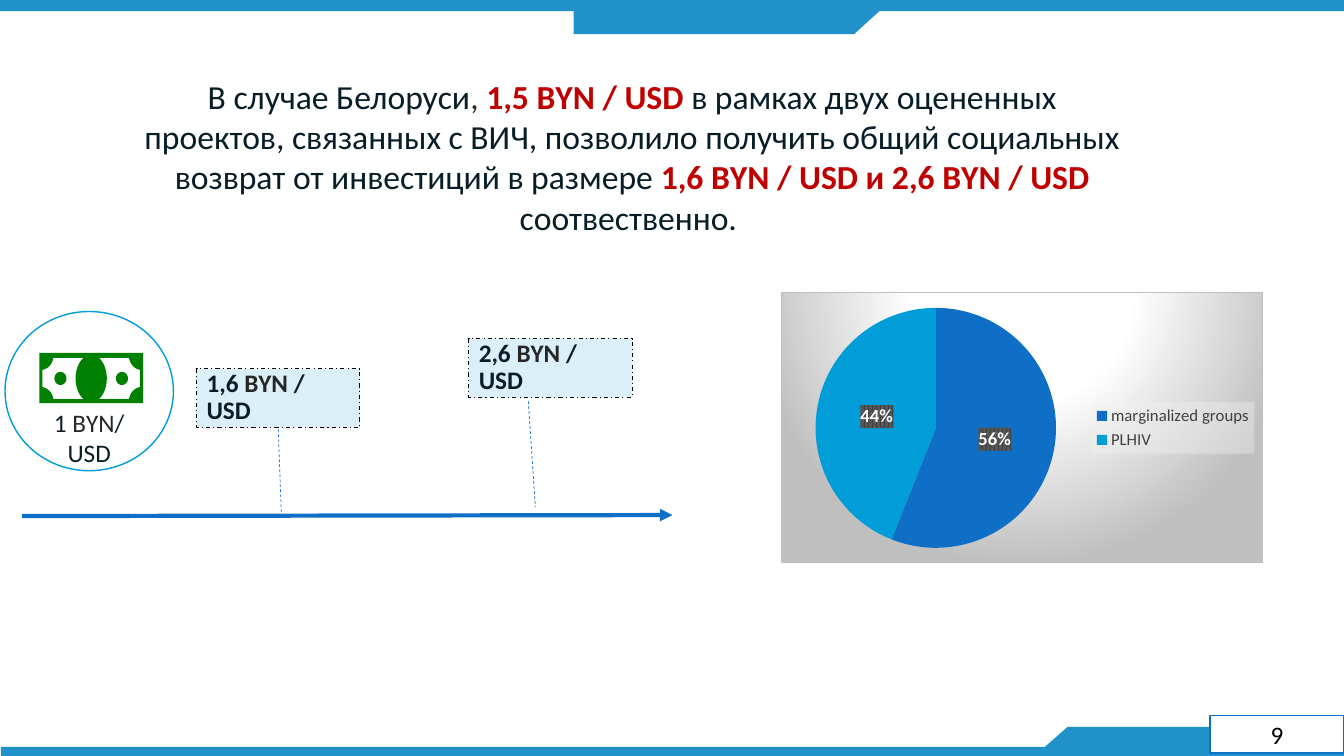
from dataclasses import dataclass
from math import cos, pi, sin

from lxml.etree import SubElement
from pptx import Presentation
from pptx.chart.data import CategoryChartData
from pptx.dml.color import RGBColor
from pptx.enum.chart import XL_CHART_TYPE as CT, XL_LABEL_POSITION as LP, XL_LEGEND_POSITION as LG
from pptx.enum.dml import MSO_LINE_DASH_STYLE as DASH
from pptx.enum.shapes import MSO_CONNECTOR, MSO_SHAPE as SHAPE
from pptx.enum.text import MSO_ANCHOR as ANCHOR, MSO_AUTO_SIZE as AUTO, PP_ALIGN as ALIGN
from pptx.oxml import parse_xml
from pptx.oxml.ns import nsdecls, qn
from pptx.util import Inches, Pt


@dataclass(frozen=True)
class Theme:
    font: str = "Calibri"
    band: str = "2191C9"
    blue: str = "0F6FC6"
    cyan: str = "009DD9"
    pale: str = "DBEFF9"
    ink: str = "071D28"
    grey: str = "262626"
    legend: str = "404040"
    red: str = "C00000"
    money: str = "008000"
    white: str = "FFFFFF"
    black: str = "000000"
    border: str = "BFBFBF"
    title_size: float = 24
    text_size: float = 18
    label_size: float = 13.3
    legend_size: float = 12
    chart_size: float = 10


def rgb(color):
    return RGBColor.from_string(color)


def style_font(font, name, size, color, bold=False):
    font.name, font.size, font.bold = name, Pt(size), bold
    font.color.rgb = rgb(color)


def write(tf, runs, *, font, size, bold=False, align=ALIGN.LEFT, anchor=ANCHOR.MIDDLE, spacing=1.0):
    """Fill a text frame with (text, color[, bold]) runs in one paragraph."""
    tf.word_wrap, tf.auto_size, tf.vertical_anchor = True, AUTO.NONE, anchor
    p = tf.paragraphs[0]
    p.alignment, p.line_spacing = align, spacing
    for text, color, *own_bold in runs:
        r = p.add_run()
        r.text = text
        style_font(r.font, font, size, color, own_bold[0] if own_bold else bold)


def bezier(p0, p1, p2, p3, steps=8):
    """Points along a cubic curve, without its start."""
    points = []
    for i in range(1, steps + 1):
        t = i / steps
        weights = ((1 - t) ** 3, 3 * t * (1 - t) ** 2, 3 * t * t * (1 - t), t ** 3)
        points.append(tuple(sum(w * q[axis] for w, q in zip(weights, (p0, p1, p2, p3)))
                            for axis in (0, 1)))
    return points


def chart_fill(parent, fill, line=""):
    """Put shape properties on a chart part that already has text properties."""
    sp_pr = parse_xml(f"<c:spPr {nsdecls('c', 'a')}>{fill}{line}</c:spPr>")
    parent.find(qn("c:txPr")).addprevious(sp_pr)


class SlideBuilder:
    def __init__(self, slide, theme):
        self.slide, self.theme = slide, theme

    def title(self, box, runs):
        sp = self.slide.shapes.title
        sp.left, sp.top, sp.width, sp.height = map(Inches, box)
        write(sp.text_frame, runs, font=self.theme.font, size=self.theme.title_size,
              align=ALIGN.CENTER, anchor=ANCHOR.TOP)

    def shape(self, kind, box, fill, line=None, width=1, dash=None, rotation=0):
        sp = self.slide.shapes.add_shape(kind, *map(Inches, box))
        sp.rotation = rotation
        return self.paint(sp, fill, line, width, dash)

    def paint(self, sp, fill, line=None, width=1, dash=None):
        sp.shadow.inherit = False
        sp.fill.solid()
        sp.fill.fore_color.rgb = rgb(fill)
        if line:
            sp.line.color.rgb, sp.line.width = rgb(line), Pt(width)
            sp.line.dash_style = dash
        else:
            sp.line.fill.background()
        return sp

    def text(self, sp, runs, **fmt):
        write(sp.text_frame, runs, font=self.theme.font, size=self.theme.text_size, **fmt)

    def line(self, start, end, width, dash=None, arrow=False):
        s = self.slide.shapes.add_connector(MSO_CONNECTOR.STRAIGHT, *map(Inches, start + end))
        s.line.color.rgb, s.line.width = rgb(self.theme.blue), Pt(width)
        s.line.dash_style = dash
        sp_pr = s._element.spPr
        if arrow:
            SubElement(sp_pr.find(qn("a:ln")), qn("a:tailEnd"), type="triangle")
        SubElement(sp_pr, qn("a:effectLst"))

    def outline(self, contours, fill):
        contours = [[(Inches(x), Inches(y)) for x, y in c] for c in contours]
        builder = self.slide.shapes.build_freeform(*contours[0][0])
        for i, (first, *rest) in enumerate(contours):
            if i:
                builder.move_to(*first)
            builder.add_line_segments(rest, close=True)
        return self.paint(builder.convert_to_shape(), fill)

    def pie(self, box, values, colors):
        th = self.theme
        data = CategoryChartData()
        data.categories = list(values)
        data.add_series("Series 1", list(values.values()))
        chart = self.slide.shapes.add_chart(CT.PIE, *map(Inches, box), data).chart
        chart.has_title = False
        style_font(chart.font, th.font, th.chart_size, th.black)
        plot = chart.plots[0]
        plot.vary_by_categories = True
        for i, color in enumerate(colors):
            fill = plot.series[0].points[i].format.fill
            fill.solid()
            fill.fore_color.rgb = rgb(color)
        # Percent labels on a dark pattern
        plot.has_data_labels = True
        labels = plot.data_labels
        labels.show_percentage, labels.show_value = True, False
        labels.number_format, labels.number_format_is_linked = "0%", False
        labels.position = LP.CENTER
        style_font(labels.font, th.font, th.label_size, th.white, True)
        chart_fill(labels._element, f'<a:pattFill prst="pct75"><a:fgClr><a:srgbClr val="{th.legend}"/>'
                   '</a:fgClr><a:bgClr><a:srgbClr val="595959"/></a:bgClr></a:pattFill>')
        # Legend on a translucent panel
        chart.has_legend = True
        chart.legend.position, chart.legend.include_in_layout = LG.RIGHT, False
        style_font(chart.legend.font, th.font, th.legend_size, th.legend)
        chart_fill(chart.legend._element, '<a:solidFill><a:srgbClr val="F2F2F2">'
                   '<a:alpha val="39000"/></a:srgbClr></a:solidFill>')
        # Radial background and thin border
        stops = "".join(f'<a:gs pos="{pos}000"><a:srgbClr val="{color}"/></a:gs>'
                        for pos, color in ((0, th.white), (39, th.white), (100, th.border)))
        chart_fill(chart._chartSpace, f'<a:gradFill><a:gsLst>{stops}</a:gsLst><a:path path="circle">'
                   '<a:fillToRect l="50000" t="-80000" r="50000" b="180000"/></a:path></a:gradFill>',
                   f'<a:ln w="{Pt(0.75)}"><a:solidFill><a:srgbClr val="{th.border}"/></a:solidFill></a:ln>')
        # Place of the pie inside the chart
        area = chart._chartSpace.chart.plotArea
        for old in area.findall(qn("c:layout")):
            area.remove(old)
        places = "".join(f'<c:{tag} val="{val}"/>' for tag, val in (
            ("layoutTarget", "inner"), ("xMode", "edge"), ("yMode", "edge"),
            ("x", 0.07), ("y", 0.05), ("w", 0.5), ("h", 0.9)))
        area.insert(0, parse_xml(f"<c:layout {nsdecls('c')}><c:manualLayout>{places}"
                                 "</c:manualLayout></c:layout>"))


def banknote_contours():
    mid_x, mid_y = 0.905, 3.755
    frame = [(0.39, 3.5), (0.39, 4), (1.42, 4), (1.42, 3.5)]
    upper = [(0.42, 3.67), *bezier((0.42, 3.67), (0.48, 3.66), (0.52, 3.61), (0.53, 3.55)),
             (0.83, 3.55), *bezier((0.83, 3.55), (0.79, 3.58), (0.75, 3.66), (0.75, mid_y))]
    window = upper + [(x, 2 * mid_y - y) for x, y in reversed(upper[:-1])]
    eye = [(0.6 + 0.06 * cos(i * pi / 12), mid_y + 0.065 * sin(i * pi / 12)) for i in range(24)]
    mirrored = [[(2 * mid_x - x, y) for x, y in c] for c in (window, eye)]
    return [frame, window, eye, *mirrored]


def main():
    th = Theme()
    prs = Presentation()
    prs.slide_width, prs.slide_height = Inches(13.33), Inches(7.5)
    s = SlideBuilder(prs.slides.add_slide(prs.slide_layouts[5]), th)

    # Top and bottom bands with tabs
    for box in ((0, 0, 13.33, 0.11), (0.01, 7.41, 13.32, 0.09),
                (5.69, 0.04, 2.78, 0.3), (10.59, 7.21, 2.74, 0.29)):
        s.shape(SHAPE.RECTANGLE, box, th.band)
    for box, rotation in (((8.14, 0.04, 0.66, 0.3), 0), ((10.26, 7.21, 0.66, 0.29), 180)):
        s.shape(SHAPE.FLOWCHART_MERGE, box, th.band, rotation=rotation)

    # Main statement
    s.title((1.25, 0.7, 10.04, 1.72), [
        ("В случае Белоруси", th.ink), (", ", th.grey), ("1,5 ВYN / USD ", th.red, True),
        ("в рамках двух оцененных проектов, связанных с ВИЧ, позволило получить "
         "общий социальных возврат от инвестиций в размере ", th.ink),
        ("1,6 ВYN / USD и 2,6 ВYN / USD ", th.red, True), ("соотвественно. ", th.ink)])

    # Invested unit: circle and banknote
    sp = s.shape(SHAPE.FLOWCHART_CONNECTOR, (0.05, 3.09, 1.67, 1.58), th.white, th.cyan)
    sp.text_frame.margin_top, sp.text_frame.margin_bottom = Inches(0.72), 0
    s.text(sp, [("1 ", th.ink), ("ВYN", th.grey), ("/ USD", th.ink)],
           align=ALIGN.CENTER, anchor=ANCHOR.TOP)
    s.outline(banknote_contours(), th.money)

    # Return axis with marked values
    s.line((0.22, 5.12), (6.67, 5.11), 3, arrow=True)
    for amount, left, top, start, end in (("1,6 ", 1.95, 3.66, (2.76, 4.26), (2.79, 5.08)),
                                          ("2,6 ", 4.65, 3.36, (5.24, 3.98), (5.31, 5.03))):
        sp = s.shape(SHAPE.RECTANGLE, (left, top, 1.62, 0.58), th.pale, th.black, 0.75, DASH.DASH_DOT)
        sp.text_frame.margin_right = Inches(0.15)
        s.text(sp, [(amount, th.ink), ("ВYN ", th.grey), ("/ USD", th.ink)], bold=True, spacing=0.9)
        s.line(start, end, 0.5, DASH.DASH)

    # Share of each group
    s.pie((7.75, 2.9, 4.78, 2.69), {"marginalized groups": 56, "PLHIV": 44}, (th.blue, th.cyan))

    # Slide number
    sp = s.shape(SHAPE.RECTANGLE, (12, 7.1, 1.33, 0.37), th.white, th.blue)
    s.text(sp, [("9", th.black)], align=ALIGN.CENTER)

    prs.save("out.pptx")


if __name__ == "__main__":
    main()
